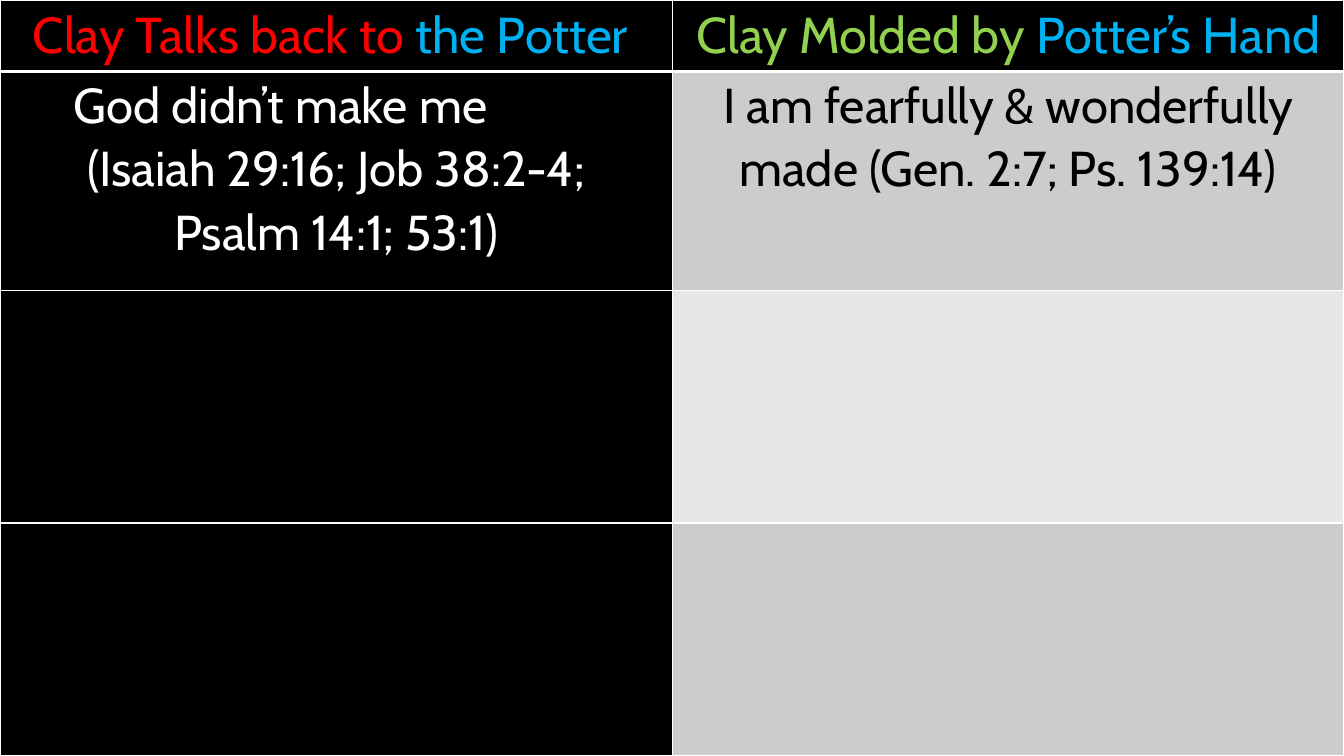
import pptx
import pptx.dml.color
import pptx.enum.text
import pptx.oxml
import pptx.oxml.ns
import pptx.util
from pptx.util import Inches

COLORS = {
    "black": "000000",
    "white": "FFFFFF",
    "red": "FF0000",
    "blue": "00B0F0",
    "green": "92D050",
    "gray": "CCCCCC",
    "light_gray": "E7E7E7",
}
COLUMN_WIDTHS = [6.67, 6.66]
ROW_HEIGHTS = [0.71, 2.17, 2.31, 2.31]
FILLS = [
    ["black", "black"],
    ["black", "gray"],
    ["black", "light_gray"],
    ["black", "gray"],
]
# Each cell is a list of paragraphs: left indent (None when centred) and runs
CELL_TEXTS = {
    (0, 0): [(None, [("Clay Talks back to ", "red"), ("the Potter ", "blue")])],
    (0, 1): [(None, [("Clay Molded by ", "green"), ("Potter’s Hand", "blue")])],
    (1, 0): [
        (0.66, [("God didn’t make me", "white")]),
        (None, [("(Isaiah 29:16; Job 38:2-4;", "white")]),
        (None, [("Psalm 14:1; 53:1)", "white")]),
    ],
    (1, 1): [
        (None, [("I am fearfully & wonderfully made (Gen. 2:7; Ps. 139:14)", "black")]),
    ],
}


def rgb(name):
    return pptx.dml.color.RGBColor.from_string(COLORS[name])


def add_border(cell, side, points):
    """Append a white line on one side (L, R, T or B); call before filling the cell."""
    line = pptx.oxml.parse_xml(
        f'<a:ln{side} {pptx.oxml.ns.nsdecls("a")} w="{pptx.util.Pt(points)}">'
        f'<a:solidFill><a:srgbClr val="{COLORS["white"]}"/></a:solidFill></a:ln{side}>'
    )
    cell._tc.get_or_add_tcPr().append(line)


presentation = pptx.Presentation()
presentation.slide_width = Inches(13.33)
presentation.slide_height = Inches(7.5)
slide = presentation.slides.add_slide(presentation.slide_layouts[6])
slide.background.fill.solid()
slide.background.fill.fore_color.rgb = rgb("black")

table = slide.shapes.add_table(
    len(ROW_HEIGHTS), len(COLUMN_WIDTHS), 0, 0, Inches(13.33), Inches(7.5)
).table
for column, width in zip(table.columns, COLUMN_WIDTHS):
    column.width = Inches(width)
for row, height in zip(table.rows, ROW_HEIGHTS):
    row.height = Inches(height)

for row_index, row_fills in enumerate(FILLS):
    for column_index, fill_name in enumerate(row_fills):
        cell = table.cell(row_index, column_index)
        cell.margin_left = cell.margin_right = Inches(0.07)
        cell.margin_top = cell.margin_bottom = 0
        for side in "LRTB":
            under_header = (row_index, side) in [(0, "B"), (1, "T")]
            add_border(cell, side, 3 if under_header else 1)
        cell.fill.solid()
        cell.fill.fore_color.rgb = rgb(fill_name)

        paragraphs = CELL_TEXTS.get((row_index, column_index), [])
        for index, (indent, runs) in enumerate(paragraphs):
            text_frame = cell.text_frame
            paragraph = text_frame.add_paragraph() if index else text_frame.paragraphs[0]
            paragraph.line_spacing = 1.07
            if indent is None:
                paragraph.alignment = pptx.enum.text.PP_ALIGN.CENTER
            else:
                paragraph.alignment = pptx.enum.text.PP_ALIGN.LEFT
                paragraph._p.get_or_add_pPr().set("marL", str(Inches(indent)))
            for text, color_name in runs:
                run = paragraph.add_run()
                run.text = text
                run.font.name = "Cabin"
                run.font.size = pptx.util.Pt(35 if row_index else 36)
                run.font.bold = False
                run.font.color.rgb = rgb(color_name)

presentation.save("out.pptx")
